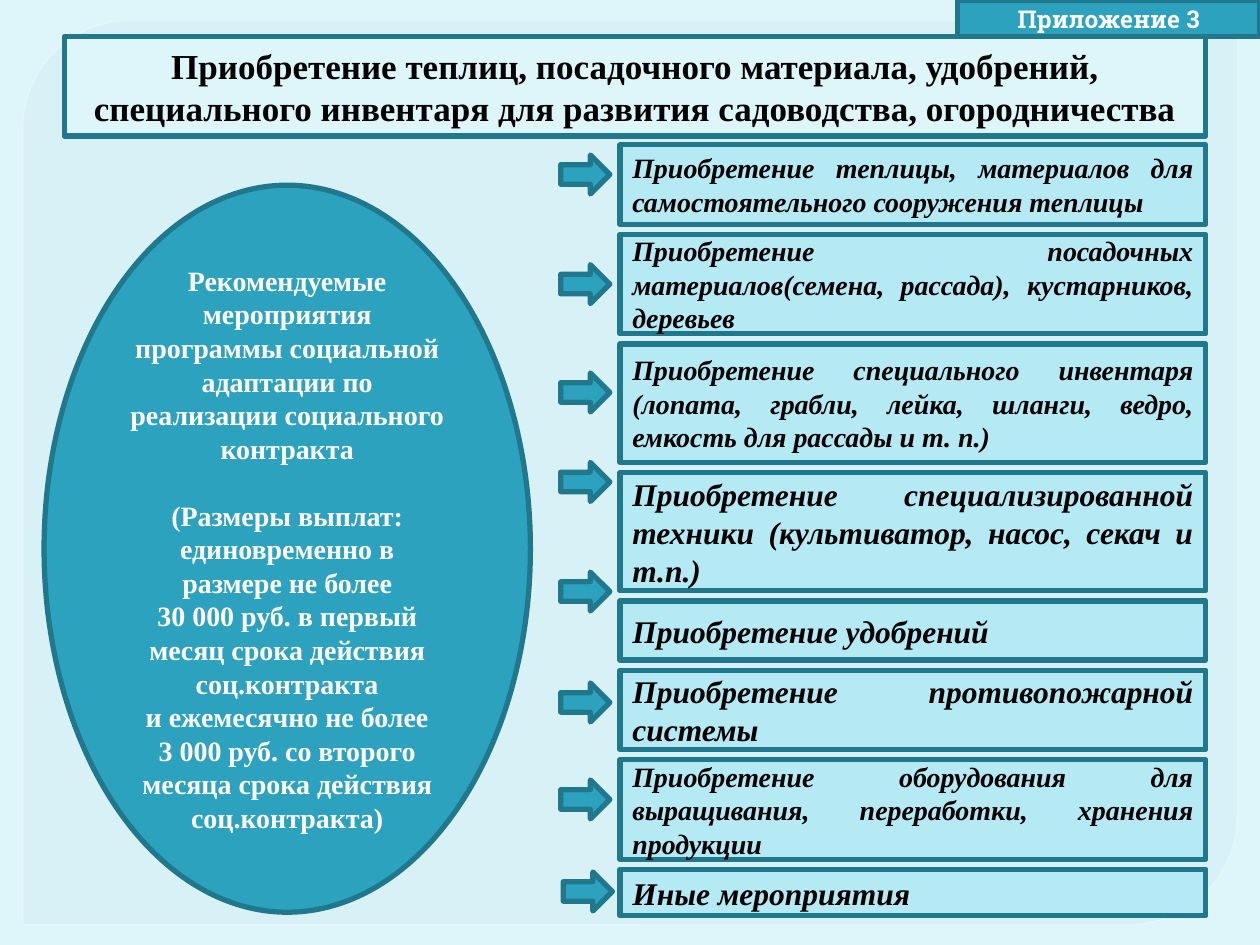
"""Build the slide on greenhouse and gardening purchases under a social contract."""
from dataclasses import dataclass

import lxml.etree
import pptx
import pptx.dml.color
import pptx.enum.shapes
import pptx.enum.text
import pptx.oxml.ns
import pptx.util

Pt = pptx.util.Pt
Shape = pptx.enum.shapes.MSO_SHAPE
Align = pptx.enum.text.PP_ALIGN

PALE, LIGHT, TEAL, DARK = "DEF5FA", "B5E9F4", "2DA2BF", "21788D"
BLACK, WHITE = "000000", "FFFFFF"
SERIF = "Times New Roman"
MEASURE_GAP = 5.75


@dataclass
class Box:
    left: float
    top: float
    width: float
    height: float

    def lengths(self) -> list:
        return [Pt(value) for value in (self.left, self.top, self.width, self.height)]


@dataclass
class Measure:
    wording: str
    height: float
    size: int
    arrow_top: float
    arrow_left: float = 320.4


MEASURES = [
    Measure("Приобретение теплицы, материалов для самостоятельного сооружения теплицы",
            45.36, 16, 88.56),
    Measure("Приобретение посадочных материалов(семена, рассада), кустарников, деревьев",
            56.88, 16, 151.2),
    Measure("Приобретение специального инвентаря (лопата, грабли, лейка, шланги, ведро, "
            "емкость для рассады и т. п.)", 67.68, 16, 213.12),
    Measure("Приобретение специализированной техники (культиватор, насос, секач и т.п.)",
            67.68, 18, 264.24),
    Measure("Приобретение удобрений", 33.84, 18, 326.88),
    Measure("Приобретение противопожарной системы", 45.36, 18, 390.24),
    Measure("Приобретение оборудования для выращивания, переработки, хранения продукции",
            56.88, 16, 445.68),
    Measure("Иные мероприятия", 26.64, 18, 498.24, 321.84),
]

PROGRAMME = [
    "Рекомендуемые мероприятия программы социальной адаптации по реализации социального контракта",
    "(Размеры выплат: единовременно в размере не более",
    "30 000 руб. в первый месяц срока действия соц.контракта",
    "и ежемесячно не более",
    "3 000 руб. со второго месяца срока действия соц.контракта)",
]


def rgb(value: str) -> pptx.dml.color.RGBColor:
    return pptx.dml.color.RGBColor.from_string(value)


def paint(shape, fill: str, line: str = DARK, width: float = 3) -> None:
    shape.fill.solid()
    shape.fill.fore_color.rgb = rgb(fill)
    shape.line.color.rgb = rgb(line)
    shape.line.width = Pt(width)


def add_figure(slide, kind, box: Box, fill: str):
    figure = slide.shapes.add_shape(kind, *box.lengths())
    figure.shadow.inherit = False
    paint(figure, fill)
    return figure


def write(shape, paragraphs: list[str], align, color: str, **formats) -> None:
    frame = shape.text_frame
    frame.text = "\n".join(paragraphs)
    settings = {"word_wrap": True,
                "auto_size": pptx.enum.text.MSO_AUTO_SIZE.NONE,
                "vertical_anchor": pptx.enum.text.MSO_ANCHOR.MIDDLE}
    for name, value in settings.items():
        setattr(frame, name, value)
    for paragraph in frame.paragraphs:
        paragraph.alignment = align
        for run in paragraph.runs:
            run.font.color.rgb = rgb(color)
            for name, value in ({"name": SERIF, "bold": True} | formats).items():
                setattr(run.font, name, value)


def add_panel(slide) -> None:
    panel = add_figure(slide, Shape.ROUND_2_DIAG_RECTANGLE,
                       Box(12.96, 11.52, 694.08, 516.96), "D4EFF5")
    panel.adjustments[0], panel.adjustments[1] = 0.12, 0
    paint(panel, "D4EFF5", "E2FAFF", 0.87)
    qn = pptx.oxml.ns.qn
    colors = panel._element.spPr.iter(qn("a:srgbClr"))
    for color, opacity in zip(colors, (65, 88)):
        lxml.etree.SubElement(color, qn("a:alpha"), val=str(opacity * 1000))
    slide.shapes._spTree.insert(2, panel._element)


def add_title(slide, box: Box) -> None:
    title = slide.shapes.title
    for name, value in zip(("left", "top", "width", "height"), box.lengths()):
        setattr(title, name, value)
    paint(title, PALE)
    write(title, ["Приобретение теплиц, посадочного материала, удобрений, специального "
                  "инвентаря для развития садоводства, огородничества"],
          Align.CENTER, BLACK, size=Pt(20))


def add_measures(slide) -> None:
    top = 82.8
    for measure in MEASURES:
        card = add_figure(slide, Shape.RECTANGLE,
                          Box(354.24, top, 334.8, measure.height), LIGHT)
        write(card, [measure.wording], Align.JUSTIFY, BLACK,
              size=Pt(measure.size), italic=True)
        add_figure(slide, Shape.RIGHT_ARROW,
                   Box(measure.arrow_left, measure.arrow_top, 28.08, 22.32), TEAL)
        top += measure.height + MEASURE_GAP


def main() -> None:
    deck = pptx.Presentation()
    deck.slide_width, deck.slide_height = Pt(720), Pt(540)
    slide = deck.slides.add_slide(deck.slide_layouts[5])
    slide.background.fill.solid()
    slide.background.fill.fore_color.rgb = rgb(PALE)

    add_panel(slide)
    add_title(slide, Box(36.72, 20.88, 652.32, 56.88))
    programme = add_figure(slide, Shape.OVAL, Box(25.2, 105.84, 277.92, 415.44), TEAL)
    write(programme, PROGRAMME, Align.CENTER, WHITE, size=Pt(16))
    programme.text_frame.paragraphs[1].space_before = Pt(19)
    add_measures(slide)
    appendix = add_figure(slide, Shape.RECTANGLE, Box(547.2, 0, 172.8, 20.88), TEAL)
    write(appendix, ["Приложение 3"], Align.CENTER, WHITE,
          size=Pt(14), name="Roboto Slab")

    deck.save("out.pptx")


if __name__ == "__main__":
    main()
